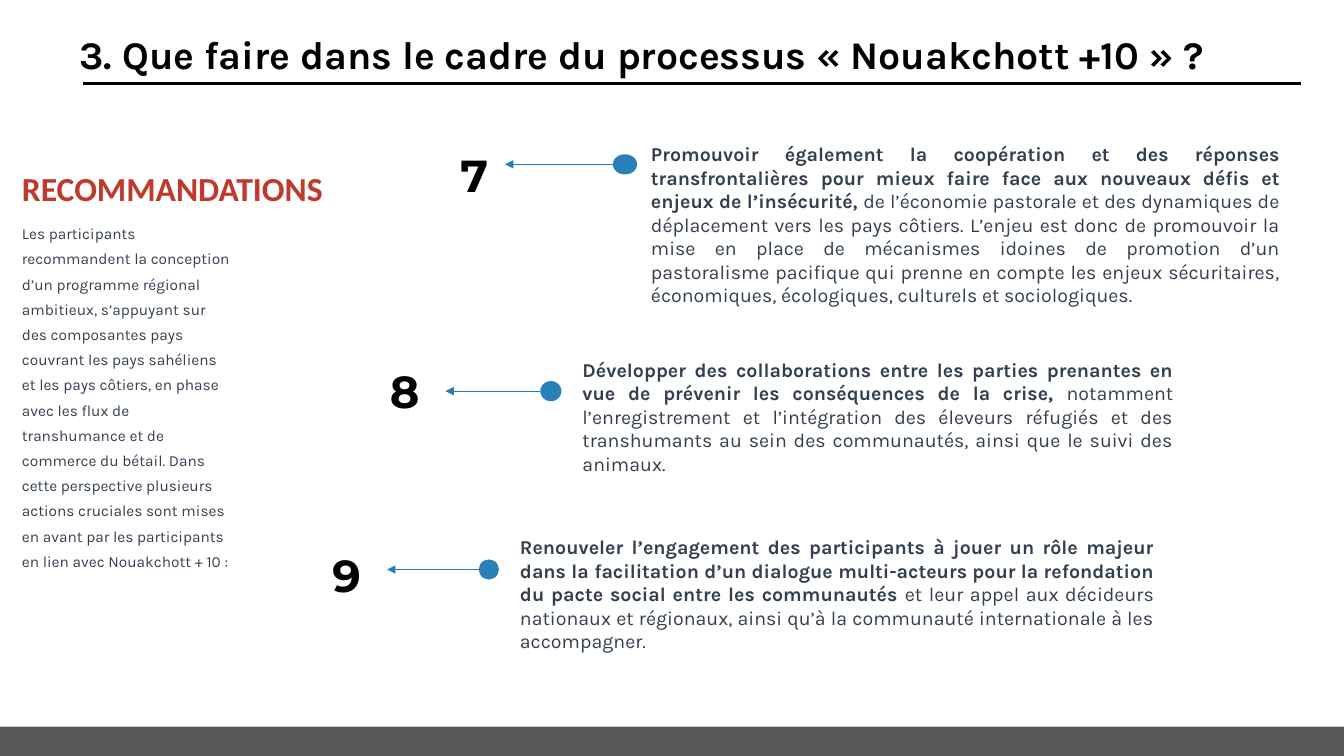
from dataclasses import dataclass

from lxml.etree import SubElement
from pptx import Presentation
from pptx.dml.color import RGBColor
from pptx.enum.shapes import MSO_CONNECTOR, MSO_SHAPE
from pptx.enum.text import MSO_ANCHOR, MSO_AUTO_SIZE, PP_ALIGN
from pptx.oxml.ns import qn
from pptx.util import Pt

WIDTH, HEIGHT = 960, 540


@dataclass(frozen=True)
class Theme:
    ink: str = "000000"
    text: str = "333F50"
    accent: str = "C0392B"
    dot: str = "2980B9"
    arrow: str = "257EB8"
    footer: str = "595959"
    title_size: float = 28
    heading_size: float = 24
    number_size: float = 32
    body_size: float = 14
    side_size: float = 11
    font: str = "Karla"
    heading_font: str = "Calibri"
    number_font: str = "Montserrat"


@dataclass(frozen=True)
class Recommendation:
    number: str
    number_at: tuple
    dot_at: tuple
    dot_width: float
    arrow_end: float
    text_at: tuple
    text_size: tuple
    strong: str
    plain: str


RECOMMENDATIONS = [
    Recommendation(
        "7", (321.8, 102.2), (437.8, 110.2), 17.3, 360.7, (457.9, 97.9), (463.7, 126),
        "Promouvoir également la coopération et des réponses transfrontalières pour mieux "
        "faire face aux nouveaux défis et enjeux de l’insécurité, ",
        "de l’économie pastorale et des dynamiques de déplacement vers les pays côtiers. "
        "L’enjeu est donc de promouvoir la mise en place de mécanismes idoines de promotion "
        "d’un pastoralisme pacifique qui prenne en compte les enjeux sécuritaires, "
        "économiques, écologiques, culturels et sociologiques."),
    Recommendation(
        "8", (271.4, 256.3), (385.9, 272.2), 15.1, 318.2, (409, 252), (436.3, 92.2),
        "Développer des collaborations entre les parties prenantes en vue de prévenir les "
        "conséquences de la crise, ",
        "notamment l’enregistrement et l’intégration des éleveurs réfugiés et des "
        "transhumants au sein des communautés, ainsi que le suivi des animaux."),
    Recommendation(
        "9", (230.4, 387.4), (342, 399.6), 14.4, 276.5, (364.3, 378.7), (467.3, 92.2),
        "Renouveler l’engagement des participants à jouer un rôle majeur dans la "
        "facilitation d’un dialogue multi-acteurs pour la refondation du pacte social entre "
        "les communautés ",
        "et leur appel aux décideurs nationaux et régionaux, ainsi qu’à la communauté "
        "internationale à les accompagner."),
]

INTRODUCTION = (
    "Les participants recommandent la conception d’un programme régional ambitieux, "
    "s’appuyant sur des composantes pays couvrant les pays sahéliens et les pays côtiers, "
    "en phase avec les flux de transhumance et de commerce du bétail. Dans cette "
    "perspective plusieurs actions cruciales sont mises en avant par les participants en "
    "lien avec Nouakchott + 10 :")


def add_span(para, text, *, size, color, font, bold=False):
    span = para.add_run()
    span.text = text
    span.font.size = Pt(size)
    span.font.name = font
    span.font.bold = bold
    span.font.color.rgb = RGBColor.from_string(color)


class SlideBuilder:
    def __init__(self, page, theme):
        self.page = page
        self.theme = theme

    def fill_frame(self, box, spans, *, align=PP_ALIGN.LEFT, anchor=MSO_ANCHOR.TOP,
                   line_spacing=None, space_after=None):
        """Write one paragraph made of (text, format) pairs into the box."""
        frame = box.text_frame
        frame.word_wrap = True
        frame.auto_size = MSO_AUTO_SIZE.NONE
        frame.vertical_anchor = anchor
        para = frame.paragraphs[0]
        para.alignment = align
        if line_spacing:
            para.line_spacing = Pt(line_spacing)
        if space_after:
            para.space_after = Pt(space_after)
        for text, style in spans:
            add_span(para, text, **style)

    def title(self, text, left, top, width, height):
        box = self.page.shapes.title
        box.left, box.top, box.width, box.height = map(Pt, (left, top, width, height))
        style = dict(size=self.theme.title_size, color=self.theme.ink,
                     font=self.theme.font, bold=True)
        self.fill_frame(box, [(text, style)])

    def text(self, spans, left, top, width, height, **layout):
        box = self.page.shapes.add_textbox(*map(Pt, (left, top, width, height)))
        self.fill_frame(box, spans, **layout)

    def shape(self, kind, left, top, width, height, color):
        shape = self.page.shapes.add_shape(kind, *map(Pt, (left, top, width, height)))
        shape.shadow.inherit = False
        shape.fill.solid()
        shape.fill.fore_color.rgb = RGBColor.from_string(color)
        shape.line.fill.background()

    def line(self, start, end, y, *, color, weight, arrow=False):
        line = self.page.shapes.add_connector(
            MSO_CONNECTOR.STRAIGHT, Pt(start), Pt(y), Pt(end), Pt(y))
        line.line.color.rgb = RGBColor.from_string(color)
        line.line.width = Pt(weight)
        if arrow:
            SubElement(line.line._get_or_add_ln(), qn("a:tailEnd"), type="triangle")
        SubElement(line._element.spPr, qn("a:effectLst"))

    def recommendation(self, item):
        theme = self.theme
        dot_left, dot_top = item.dot_at
        dot_height = 14.4
        number_style = dict(size=theme.number_size, color=theme.ink,
                            font=theme.number_font, bold=True)
        body_style = dict(size=theme.body_size, color=theme.text, font=theme.font)
        self.text([(item.number, number_style)], *item.number_at, 39, 46)
        self.text([(item.strong, dict(body_style, bold=True)), (item.plain, body_style)],
                  *item.text_at, *item.text_size, align=PP_ALIGN.JUSTIFY)
        self.shape(MSO_SHAPE.OVAL, dot_left, dot_top, item.dot_width, dot_height, theme.dot)
        self.line(dot_left, item.arrow_end, dot_top + dot_height / 2,
                  color=theme.arrow, weight=0.75, arrow=True)


def main():
    deck = Presentation()
    deck.slide_width, deck.slide_height = Pt(WIDTH), Pt(HEIGHT)
    title_only = deck.slide_layouts[5]
    theme = Theme()
    builder = SlideBuilder(deck.slides.add_slide(title_only), theme)

    builder.shape(MSO_SHAPE.RECTANGLE, 0, 519, WIDTH, HEIGHT - 519, theme.footer)
    builder.title("3. Que faire dans le cadre du processus « Nouakchott +10 » ?",
                  49.7, 18, 910, 41)
    builder.line(59, 929, 59.8, color=theme.ink, weight=2.25)

    heading_style = dict(size=theme.heading_size, color=theme.accent,
                         font=theme.heading_font, bold=True)
    side_style = dict(size=theme.side_size, color=theme.text, font=theme.font)
    builder.text([("RECOMMANDATIONS", heading_style)], 8.6, 86.4, 244, 65.5,
                 anchor=MSO_ANCHOR.BOTTOM)
    builder.text([(INTRODUCTION, side_style)], 8.6, 151.9, 165.6, 241.2,
                 line_spacing=18, space_after=12)

    for item in RECOMMENDATIONS:
        builder.recommendation(item)
    deck.save("out.pptx")


if __name__ == "__main__":
    main()
